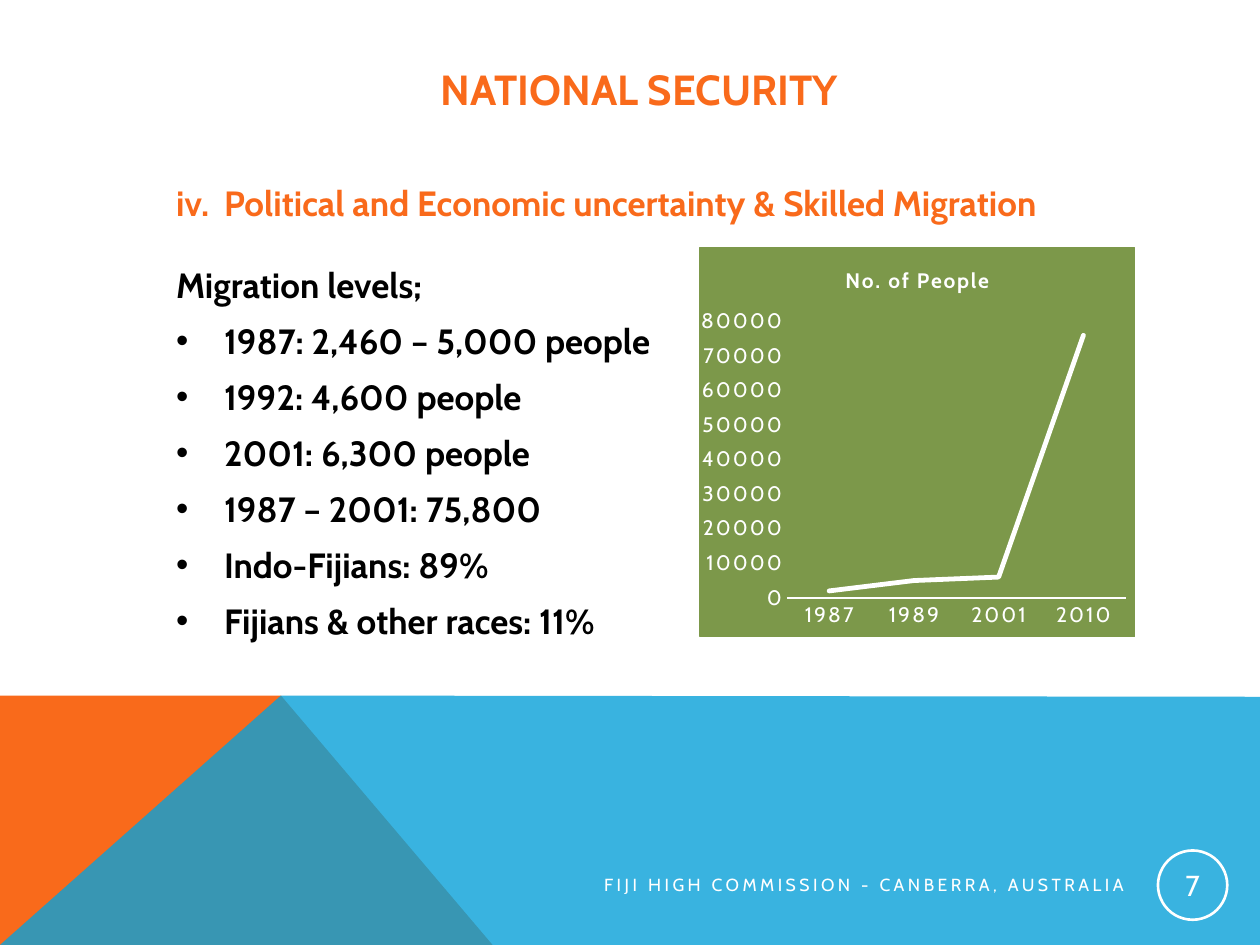
from dataclasses import dataclass

import lxml.etree
import pptx
import pptx.chart.data
import pptx.dml.color
import pptx.enum.chart
import pptx.enum.shapes
import pptx.enum.text
import pptx.oxml
import pptx.oxml.ns
import pptx.util

Inches = pptx.util.Inches
Pt = pptx.util.Pt
Align = pptx.enum.text.PP_ALIGN
Anchor = pptx.enum.text.MSO_ANCHOR
qn = pptx.oxml.ns.qn

FONT = "Cabin"
ORANGE, BLUE, GREEN = "F96A1B", "08A1D9", "7C984A"
WHITE, BLACK = "FFFFFF", "000000"
INDENT = 0.38
NAMESPACES = pptx.oxml.ns.nsdecls("c", "a")


@dataclass
class Box:
    left: float
    top: float
    width: float
    height: float

    def lengths(self) -> tuple:
        return tuple(Inches(v) for v in (self.left, self.top, self.width, self.height))


@dataclass
class Style:
    size: float
    color: str
    bold: bool = False
    spacing: int = 0  # hundredths of a point


@dataclass
class Line:
    text: str
    bullet: bool = False


@dataclass
class Band:
    points: list
    color: str
    opacity: int = 100


def rgb(color: str) -> pptx.dml.color.RGBColor:
    return pptx.dml.color.RGBColor.from_string(color)


def style_font(font, style: Style) -> None:
    font.name = FONT
    font.size = Pt(style.size)
    font.bold = style.bold
    font.color.rgb = rgb(style.color)
    if style.spacing:
        font._element.set("spc", str(style.spacing))


def add_run(paragraph, text: str, style: Style) -> None:
    run = paragraph.add_run()
    run.text = text
    style_font(run.font, style)


def add_band(slide, band: Band) -> None:
    points = [(Inches(x), Inches(y)) for x, y in band.points]
    builder = slide.shapes.build_freeform(*points[0], scale=1.0)
    builder.add_line_segments(points[1:], close=True)
    shape = builder.convert_to_shape()
    shape.shadow.inherit = False
    shape.line.fill.background()
    shape.fill.solid()
    shape.fill.fore_color.rgb = rgb(band.color)
    if band.opacity < 100:
        color = shape._element.spPr.find(qn("a:solidFill"))[0]
        lxml.etree.SubElement(color, qn("a:alpha")).set("val", str(band.opacity * 1000))


def add_text(slide, box: Box):
    frame = slide.shapes.add_textbox(*box.lengths()).text_frame
    frame.word_wrap = True
    return frame


def add_list(slide, box: Box, lines: list, style: Style) -> None:
    frame = add_text(slide, box)
    for index, line in enumerate(lines):
        paragraph = frame.add_paragraph() if index else frame.paragraphs[0]
        properties = paragraph._p.get_or_add_pPr()
        properties.set("marL", str(Inches(INDENT)))
        properties.set("indent", str(-Inches(INDENT)))
        if line.bullet:
            lxml.etree.SubElement(properties, qn("a:buFont")).set("typeface", "Arial")
            lxml.etree.SubElement(properties, qn("a:buChar")).set("char", "•")
        if index:
            paragraph.space_before = Pt(8)
        add_run(paragraph, line.text, style)


def style_axis(axis, style: Style) -> None:
    axis.has_major_gridlines = False
    axis.major_tick_mark = pptx.enum.chart.XL_TICK_MARK.NONE
    axis.minor_tick_mark = pptx.enum.chart.XL_TICK_MARK.NONE
    style_font(axis.tick_labels.font, style)


def add_migration_chart(slide, box: Box) -> None:
    data = pptx.chart.data.CategoryChartData()
    data.categories = ["1987", "1989", "2001", "2010"]
    data.add_series("No. of People", [2000, 5000, 6000, 76000])
    chart = slide.shapes.add_chart(
        pptx.enum.chart.XL_CHART_TYPE.LINE_STACKED, *box.lengths(), data).chart
    style_font(chart.font, Style(10, BLACK))
    chart.has_legend = False
    chart.has_title = True
    add_run(chart.chart_title.text_frame.paragraphs[0], "No. of People",
            Style(12, WHITE, bold=True, spacing=100))
    chart.chart_title.include_in_layout = False

    labels = Style(12, WHITE, spacing=120)
    style_axis(chart.category_axis, labels)
    chart.category_axis.format.line.color.rgb = rgb(WHITE)
    chart.category_axis.format.line.width = Pt(1)
    style_axis(chart.value_axis, labels)
    chart.value_axis.format.line.fill.background()
    chart.value_axis.minimum_scale = 0
    chart.value_axis.maximum_scale = 80000
    chart.value_axis.major_unit = 10000

    chart.plots[0].vary_by_categories = False
    series = chart.plots[0].series[0]
    series.smooth = False
    series.marker.style = pptx.enum.chart.XL_MARKER_STYLE.NONE
    series.format.line.color.rgb = rgb(WHITE)
    series.format.line.width = Pt(2.75)
    series.format.line._get_or_add_ln().set("cap", "rnd")

    # Plot area position, as shares of the chart
    plot_area = chart._chartSpace.chart.plotArea
    for layout in plot_area.findall(qn("c:layout")):
        plot_area.remove(layout)
    sizes = "".join(f'<c:{name} val="{value}"/>' for name, value in (
        ("layoutTarget", "inner"), ("xMode", "edge"), ("yMode", "edge"),
        ("x", 0.2), ("y", 0.19), ("w", 0.78), ("h", 0.71)))
    plot_area.insert(0, pptx.oxml.parse_xml(
        f"<c:layout {NAMESPACES}><c:manualLayout>{sizes}</c:manualLayout></c:layout>"))

    # Chart background
    fill = f'<a:solidFill><a:srgbClr val="{GREEN}"/></a:solidFill>'
    chart._chartSpace.chart.addnext(pptx.oxml.parse_xml(
        f'<c:spPr {NAMESPACES}>{fill}<a:ln w="{Pt(0.75)}">{fill}</a:ln></c:spPr>'))


def main() -> None:
    presentation = pptx.Presentation()
    presentation.slide_width, presentation.slide_height = Inches(10), Inches(7.5)
    slide = presentation.slides.add_slide(presentation.slide_layouts[5])

    # Coloured bands at the foot
    for band in (
        Band([(0, 7.5), (0, 5.52), (2.23, 5.52), (3.91, 7.5)], ORANGE),
        Band([(0, 7.5), (2.23, 5.52), (10, 5.53), (10, 7.5)], BLUE, opacity=80),
    ):
        add_band(slide, band)

    # Title
    title = slide.shapes.title
    title.left, title.top, title.width, title.height = Box(1.69, 0.23, 6.77, 0.95).lengths()
    title.text_frame.vertical_anchor = Anchor.MIDDLE
    title.text_frame.paragraphs[0].alignment = Align.CENTER
    add_run(title.text_frame.paragraphs[0], "NATIONAL SECURITY", Style(24, ORANGE, bold=True))

    # Heading and migration levels
    add_list(slide, Box(1.3, 1.39, 8.03, 0.63),
             [Line("iv. \tPolitical and Economic uncertainty & Skilled Migration")],
             Style(20, ORANGE, bold=True))
    levels = ["1987: 2,460 – 5,000 people", "1992: 4,600 people", "2001: 6,300 people",
              "1987 – 2001: 75,800", "Indo-Fijians: 89%", "Fijians & other races: 11%"]
    add_list(slide, Box(1.3, 2.04, 8.03, 3.13),
             [Line("Migration levels;")] + [Line(level, bullet=True) for level in levels],
             Style(20, BLACK, bold=True))
    add_migration_chart(slide, Box(5.55, 1.96, 3.46, 3.1))

    # Footer and page number
    footer = add_text(slide, Box(3.85, 6.87, 5.17, 0.3))
    footer.vertical_anchor = Anchor.MIDDLE
    footer.paragraphs[0].alignment = Align.RIGHT
    add_run(footer.paragraphs[0], "FIJI HIGH COMMISSION - CANBERRA, AUSTRALIA",
            Style(10, WHITE, spacing=200))
    circle = slide.shapes.add_shape(
        pptx.enum.shapes.MSO_SHAPE.OVAL, *Box(9.19, 6.75, 0.55, 0.55).lengths())
    circle.shadow.inherit = False
    circle.fill.background()
    circle.line.color.rgb = rgb(WHITE)
    circle.line.width = Pt(1.5)
    number = circle.text_frame
    number.margin_left = number.margin_right = Inches(0.01)
    number.margin_top = number.margin_bottom = Inches(0.01)
    number.vertical_anchor = Anchor.MIDDLE
    number.paragraphs[0].alignment = Align.CENTER
    add_run(number.paragraphs[0], "7", Style(16.5, WHITE))
    presentation.save("out.pptx")


if __name__ == "__main__":
    main()
